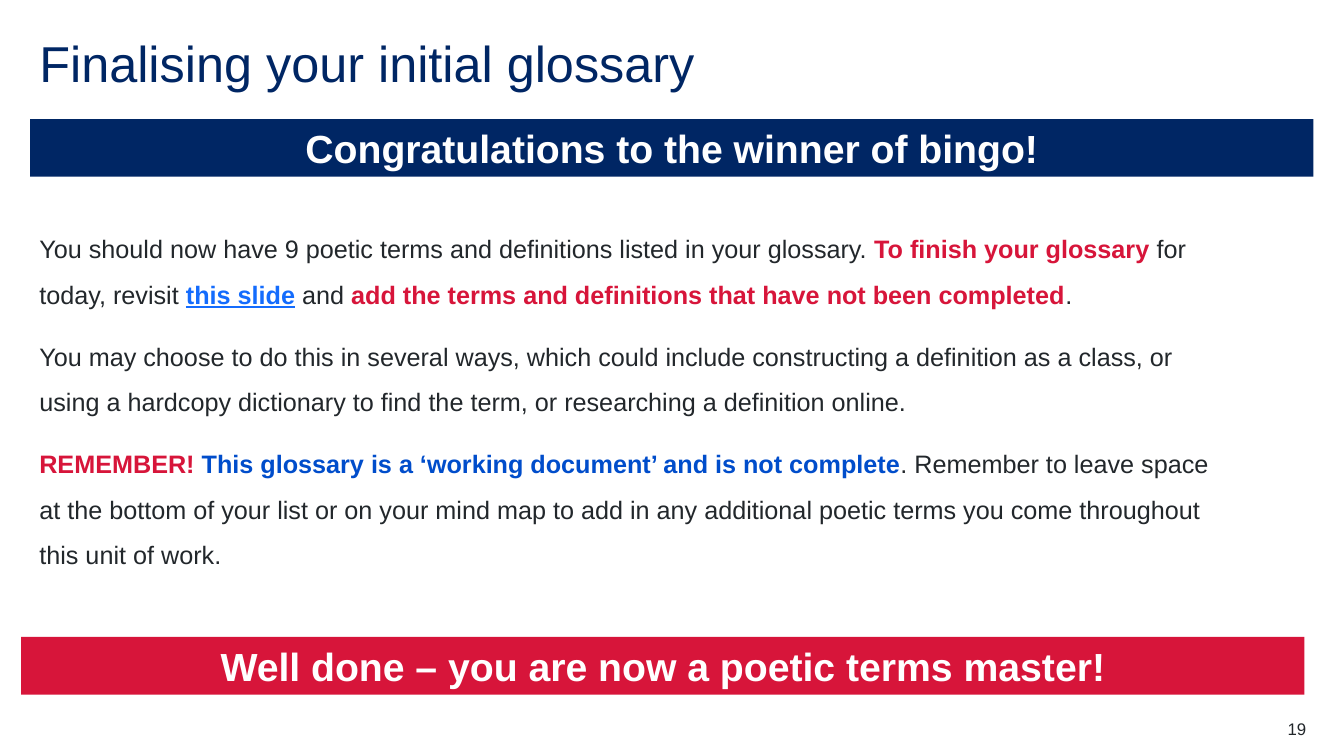
from lxml import etree
from pptx import Presentation
from pptx.dml.color import RGBColor
from pptx.enum.shapes import MSO_SHAPE
from pptx.enum.text import MSO_ANCHOR, MSO_AUTO_SIZE, PP_ALIGN
from pptx.oxml.ns import qn
from pptx.util import Pt

RECTANGLE = MSO_SHAPE.RECTANGLE
TOP, MIDDLE = MSO_ANCHOR.TOP, MSO_ANCHOR.MIDDLE
NO_AUTOFIT = MSO_AUTO_SIZE.NONE
LEFT, CENTER, RIGHT = PP_ALIGN.LEFT, PP_ALIGN.CENTER, PP_ALIGN.RIGHT

FONT = "Arial"
NAVY, RED, BLUE, LINK, INK, WHITE = (
    "002664", "D7153A", "004DCB", "146CFD", "22272B", "FFFFFF")
MARGIN = 28.08
BANNER_SIZE = (916.6, 41.2)

# Each paragraph is a list of (text, accent colour or None)
ADVICE = [
    [("You should now have 9 poetic terms and definitions listed in your glossary. ", None),
     ("To finish your glossary ", RED),
     ("for today, revisit ", None),
     ("this slide", LINK),
     (" and ", None),
     ("add the terms and definitions that have not been completed", RED),
     (".", None)],
    [("You may choose to do this in several ways, which could include constructing "
      "a definition as a class, or using a hardcopy dictionary to find the term, "
      "or researching a definition online.", None)],
    [("REMEMBER! ", RED),
     ("This glossary is a ‘working document’ and is not complete", BLUE),
     (". Remember to leave space at the bottom of your list or on your mind map to "
      "add in any additional poetic terms you come throughout this unit of work.", None)],
]


def rgb(value):
    return RGBColor.from_string(value)


def place(shape, left, top, width, height):
    shape.left, shape.top = Pt(left), Pt(top)
    shape.width, shape.height = Pt(width), Pt(height)


def prepare_frame(shape, anchor=TOP):
    frame = shape.text_frame
    frame.word_wrap = True
    frame.auto_size = NO_AUTOFIT
    frame.vertical_anchor = anchor
    frame.margin_left = frame.margin_right = 0
    frame.margin_top = frame.margin_bottom = 0
    return frame


def format_paragraph(paragraph, size, color, align=LEFT, bold=False):
    paragraph.alignment = align
    font = paragraph.font
    font.name, font.size, font.bold = FONT, Pt(size), bold
    font.color.rgb = rgb(color)


def remove_bullet(paragraph):
    properties = paragraph._p.get_or_add_pPr()
    properties.set("marL", "0")
    properties.set("indent", "0")
    etree.SubElement(properties, qn("a:buNone"))


def fill_title(title, text):
    place(title, MARGIN, MARGIN, 904.3, 43.2)
    heading = prepare_frame(title).paragraphs[0]
    heading.text = text
    heading.line_spacing = 0.9
    format_paragraph(heading, 36, NAVY)


def fill_advice(body):
    place(body, MARGIN, 156.2, 848.2, 269.3)
    frame = prepare_frame(body)
    for index, pieces in enumerate(ADVICE):
        paragraph = frame.add_paragraph() if index else frame.paragraphs[0]
        paragraph.line_spacing = 1.5
        paragraph.space_before, paragraph.space_after = Pt(0), Pt(12)
        remove_bullet(paragraph)
        format_paragraph(paragraph, 18, INK)
        for text, accent in pieces:
            run = paragraph.add_run()
            run.text = text
            run.font.name, run.font.size = FONT, Pt(18)
            run.font.color.rgb = rgb(accent or INK)
            run.font.bold = accent is not None
            if accent == LINK:
                run.font.underline = True


def add_banner(slide, left, top, color, text):
    banner = slide.shapes.add_shape(
        RECTANGLE, Pt(left), Pt(top), *map(Pt, BANNER_SIZE))
    banner.shadow.inherit = False
    banner.fill.solid()
    banner.fill.fore_color.rgb = rgb(color)
    banner.line.fill.background()
    message = prepare_frame(banner, MIDDLE).paragraphs[0]
    message.text = text
    format_paragraph(message, 28, WHITE, CENTER, bold=True)


def add_page_number(slide, number):
    box = slide.shapes.add_textbox(Pt(876.2), Pt(513.4), Pt(56.9), Pt(14.4))
    page = prepare_frame(box, MIDDLE).paragraphs[0]
    page.text = number
    format_paragraph(page, 12, INK, RIGHT)


def main():
    deck = Presentation()
    deck.slide_width, deck.slide_height = Pt(960), Pt(540)
    slide = deck.slides.add_slide(deck.slide_layouts[1])

    # Title and advice
    fill_title(slide.shapes.title, "Finalising your initial glossary")
    fill_advice(slide.placeholders[1])

    # Banners
    add_banner(slide, 21.6, 85, NAVY, "Congratulations to the winner of bingo!")
    add_banner(slide, 15.2, 455, RED, "Well done – you are now a poetic terms master!")

    # Page number
    add_page_number(slide, "19")
    deck.save("out.pptx")


if __name__ == "__main__":
    main()
